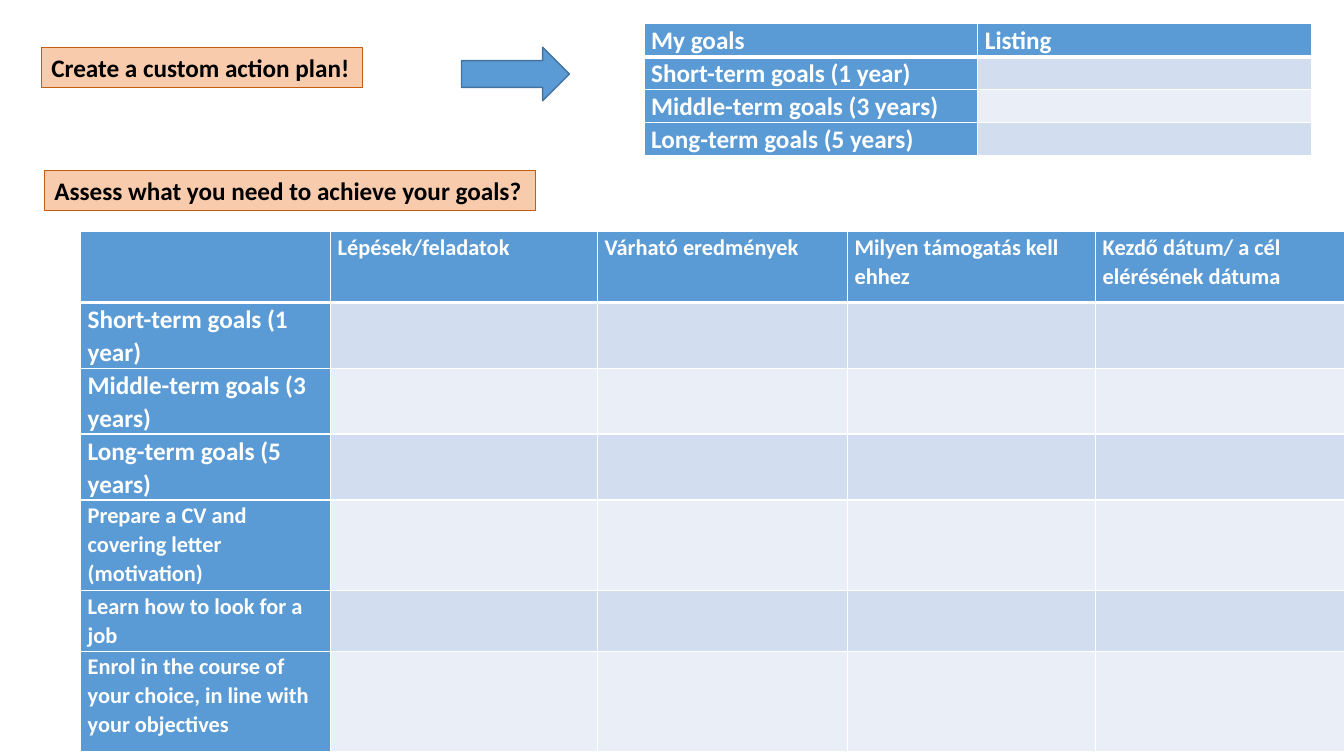
"""Build the action plan slide with two goal tables."""
from lxml.etree import SubElement
from pptx import Presentation
from pptx.dml.color import RGBColor
from pptx.enum.shapes import MSO_SHAPE
from pptx.enum.text import MSO_ANCHOR, MSO_AUTO_SIZE, PP_ALIGN
from pptx.oxml.ns import qn
from pptx.util import Cm, Pt

COLORS = {
    "blue": "5B9BD5", "edge": "43739E", "peach": "F8CBAD", "rust": "C55A11",
    "band": "D2DEEF", "pale": "EAEFF7", "white": "FFFFFF", "black": "000000",
}
GOALS = ["Short-term goals (1 year)", "Middle-term goals (3 years)",
         "Long-term goals (5 years)"]
TASKS = ["Prepare a CV and covering letter (motivation)",
         "Learn how to look for a job",
         "Enrol in the course of your choice, in line with your objectives"]
PLAN = ("Create a custom action plan!", (1.04, 1.19, 8.1, 1.02))
NEEDS = ("Assess what you need to achieve your goals?", (1.12, 4.29, 12.37, 1.02))
ARROW = (11.63, 1.19, 2.72, 1.35)
TABLES = [
    {"at": (16.23, 0.6), "cols": [8.41] * 2, "rows": [0.82] * 4,
     "head": ["My goals", "Listing"], "side": GOALS, "size": 18},
    {"at": (2.03, 5.84), "cols": [6.3, 6.73, 6.3, 6.25, 6.27],
     "rows": [1.78] + [1.63] * 3 + [2.29, 1.52, 2.54],
     "head": ["", "Lépések/feladatok", "Várható eredmények",
              "Milyen támogatás kell ehhez", "Kezdő dátum/ a cél elérésének dátuma"],
     "side": GOALS + TASKS, "size": 16},
]


def color(name):
    return RGBColor.from_string(COLORS[name])


def paint(shape, fill, line, width):
    shape.fill.solid()
    shape.fill.fore_color.rgb = color(fill)
    shape.line.color.rgb = color(line)
    shape.line.width = Pt(width)


def write(para, text, size, ink):
    run = para.add_run()
    run.text = text
    run.font.name = "Calibri"
    run.font.size = Pt(size)
    run.font.bold = True
    run.font.color.rgb = color(ink)


def label(shape, text, box):
    shape.left, shape.top, shape.width, shape.height = map(Cm, box)
    paint(shape, "peach", "rust", 0.75)
    frame = shape.text_frame
    frame.word_wrap = False
    frame.auto_size = MSO_AUTO_SIZE.NONE
    frame.vertical_anchor = MSO_ANCHOR.TOP
    para = frame.paragraphs[0]
    para.alignment = PP_ALIGN.LEFT
    write(para, text, 18, "black")


def border(cell, row):
    props = cell._tc.get_or_add_tcPr()
    for side in ("L", "R", "T", "B"):
        thick = (row, side) in ((0, "B"), (1, "T"))
        line = SubElement(props, qn(f"a:ln{side}"), w=str(Pt(3 if thick else 1)))
        fill = SubElement(line, qn("a:solidFill"))
        SubElement(fill, qn("a:srgbClr"), val=COLORS["white"])


def grid(slide, data):
    cols, rows = data["cols"], data["rows"]
    frame = slide.shapes.add_table(
        len(rows), len(cols), *map(Cm, data["at"]), Cm(sum(cols)), Cm(sum(rows)))
    table = frame.table
    for col, width in zip(table.columns, cols):
        col.width = Cm(width)
    for r, high in enumerate(rows):
        table.rows[r].height = Cm(high)
        for c in range(len(cols)):
            cell = table.cell(r, c)
            border(cell, r)
            cell.margin_left = cell.margin_right = Cm(0.18)
            cell.margin_top = cell.margin_bottom = Cm(0)
            edge = r == 0 or c == 0
            cell.fill.solid()
            cell.fill.fore_color.rgb = color(
                "blue" if edge else "band" if r % 2 else "pale")
            text = data["head"][c] if r == 0 else data["side"][r - 1] if c == 0 else ""
            if text:
                para = cell.text_frame.paragraphs[0]
                para.line_spacing = 1.07
                write(para, text, 18 if text in GOALS else data["size"], "white")


def main():
    deck = Presentation()
    deck.slide_width, deck.slide_height = Cm(33.87), Cm(19.05)
    slide = deck.slides.add_slide(deck.slide_layouts[5])
    label(slide.shapes.title, *PLAN)
    for data in TABLES:
        grid(slide, data)
    label(slide.shapes.add_textbox(*map(Cm, NEEDS[1])), *NEEDS)
    arrow = slide.shapes.add_shape(MSO_SHAPE.RIGHT_ARROW, *map(Cm, ARROW))
    arrow.shadow.inherit = False
    paint(arrow, "blue", "edge", 1)
    deck.save("out.pptx")


if __name__ == "__main__":
    main()
